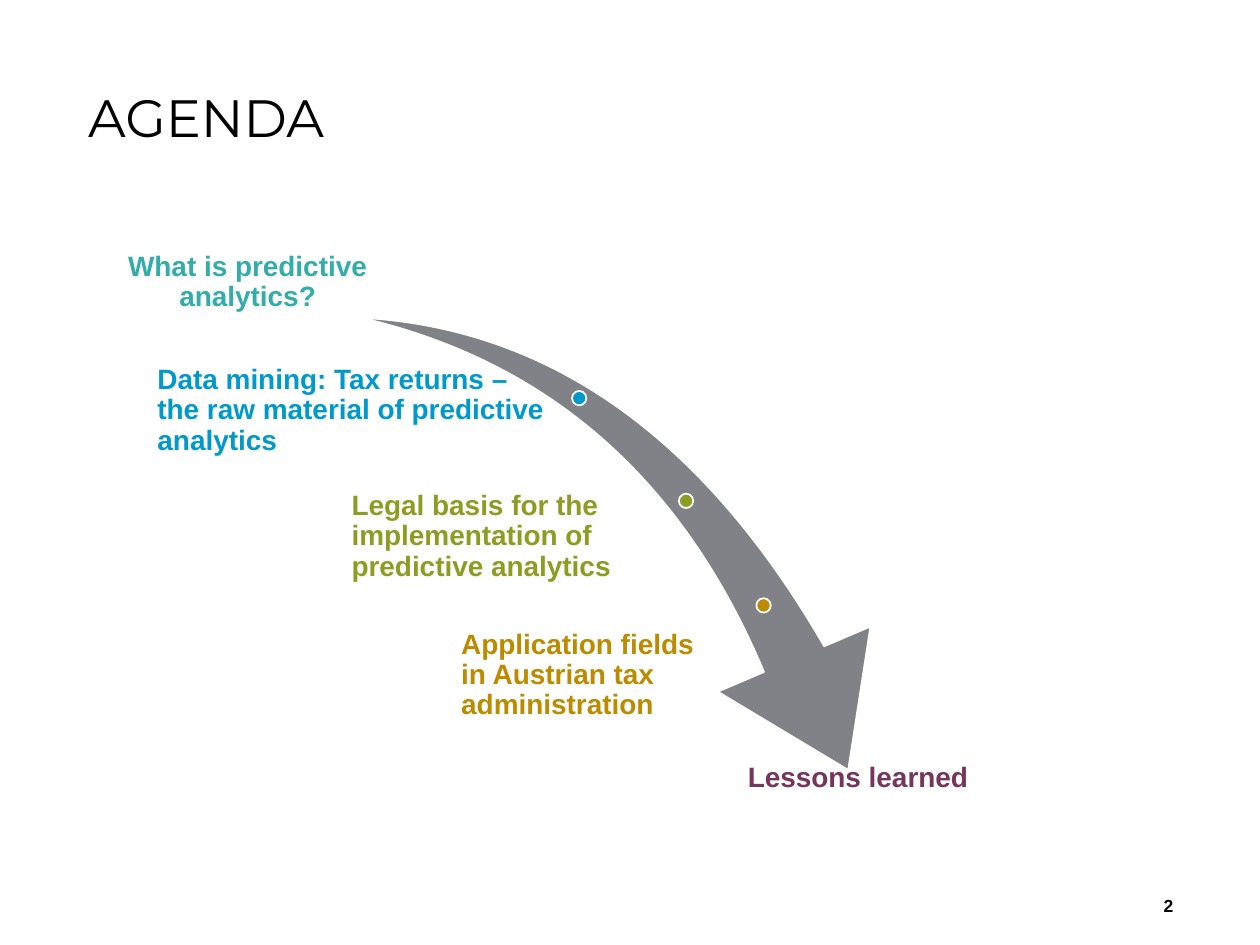
from dataclasses import dataclass

from pptx import Presentation
from pptx.dml.color import RGBColor
from pptx.enum.shapes import MSO_SHAPE
from pptx.enum.text import MSO_ANCHOR, MSO_AUTO_SIZE, PP_ALIGN
from pptx.util import Inches, Pt


@dataclass(frozen=True)
class Theme:
    title_font: str = "Montserrat"
    body_font: str = "Arial"
    title_size: int = 30
    item_size: int = 16
    number_size: int = 10
    black: str = "000000"
    white: str = "FFFFFF"
    gray: str = "808288"
    teal: str = "33ADA9"
    blue: str = "0099CC"
    green: str = "8D9D24"
    gold: str = "BC8B00"
    plum: str = "75355C"


THEME = Theme()
COLUMNS, ROWS = 100, 75
TITLE = ("AGENDA", (6, 7.1, 86.8, 10.3))
PAGE_NUMBER = ("2", (85.8, 69.9, 8.3, 4))
ARROW = (27.6, 26.6, 45.5, 31.7)
ARROW_ROTATION = 73.3
ARROW_ADJUSTMENTS = (0.163, 0.314)
DOT_SIZE = 1.14
DOTS = [
    (45.97, 31.6, THEME.blue),
    (54.45, 39.75, THEME.green),
    (60.6, 48.05, THEME.gold),
]
ITEM_HEIGHT = 8.4
ITEM_INSET = 0.2
LEFT, CENTER = PP_ALIGN.LEFT, PP_ALIGN.CENTER
TOP, MIDDLE, BOTTOM = MSO_ANCHOR.TOP, MSO_ANCHOR.MIDDLE, MSO_ANCHOR.BOTTOM
ITEMS = [
    ("What is predictive analytics?", 8.9, 16.6, 21.5, THEME.teal, CENTER, BOTTOM),
    ("Data mining: Tax returns – the raw material of predictive analytics",
     12.3, 28.4, 31.3, THEME.blue, LEFT, MIDDLE),
    ("Legal basis for the implementation of predictive analytics",
     27.7, 38.4, 24.9, THEME.green, LEFT, MIDDLE),
    ("Application fields in Austrian tax administration",
     36.4, 49.4, 19.1, THEME.gold, LEFT, MIDDLE),
    ("Lessons learned", 53.6, 60.4, 29, THEME.plum, CENTER, TOP),
]

deck = Presentation()
deck.slide_width, deck.slide_height = Inches(10), Inches(7.5)
page = deck.slides.add_slide(deck.slide_layouts[5])


def place(left, top, width, height):
    column, row = deck.slide_width / COLUMNS, deck.slide_height / ROWS
    return [round(length) for length in
            (left * column, top * row, width * column, height * row)]


def write(box, text, font, size, color, bold=True, align=LEFT, anchor=MIDDLE,
          spacing=1.0, inset=None):
    frame = box.text_frame
    frame.text = text
    frame.word_wrap = True
    frame.auto_size = MSO_AUTO_SIZE.NONE
    frame.vertical_anchor = anchor
    if inset is not None:
        margin = place(inset, 0, 0, 0)[0]
        frame.margin_left = frame.margin_right = margin
        frame.margin_top = frame.margin_bottom = margin
    para = frame.paragraphs[0]
    para.alignment = align
    para.line_spacing = spacing
    span = para.runs[0]
    span.font.name = font
    span.font.size = Pt(size)
    span.font.bold = bold
    span.font.color.rgb = RGBColor.from_string(color)


def draw(shapes, kind, area, color):
    shape = shapes.add_shape(kind, *place(*area))
    shape.shadow.inherit = False
    shape.fill.solid()
    shape.fill.fore_color.rgb = RGBColor.from_string(color)
    shape.line.color.rgb = RGBColor.from_string(THEME.white)
    shape.line.width = Pt(1)
    return shape


title = page.shapes.title
title_text, title_area = TITLE
title.left, title.top, title.width, title.height = place(*title_area)
write(title, title_text, THEME.title_font, THEME.title_size, THEME.black,
      bold=False, anchor=TOP, spacing=0.83)

diagram = page.shapes.add_group_shape().shapes
arrow = draw(diagram, MSO_SHAPE.SWOOSH_ARROW, ARROW, THEME.gray)
arrow.rotation = ARROW_ROTATION
for index, value in enumerate(ARROW_ADJUSTMENTS):
    arrow.adjustments[index] = value

for center_x, center_y, color in DOTS:
    area = (center_x - DOT_SIZE / 2, center_y - DOT_SIZE / 2, DOT_SIZE, DOT_SIZE)
    draw(diagram, MSO_SHAPE.OVAL, area, color)

for text, left, top, width, color, align, anchor in ITEMS:
    box = diagram.add_textbox(*place(left, top, width, ITEM_HEIGHT))
    write(box, text, THEME.body_font, THEME.item_size, color, align=align,
          anchor=anchor, spacing=0.9, inset=ITEM_INSET)

number_text, number_area = PAGE_NUMBER
number = page.shapes.add_textbox(*place(*number_area))
write(number, number_text, THEME.body_font, THEME.number_size, THEME.black,
      align=PP_ALIGN.RIGHT)

deck.save("out.pptx")
